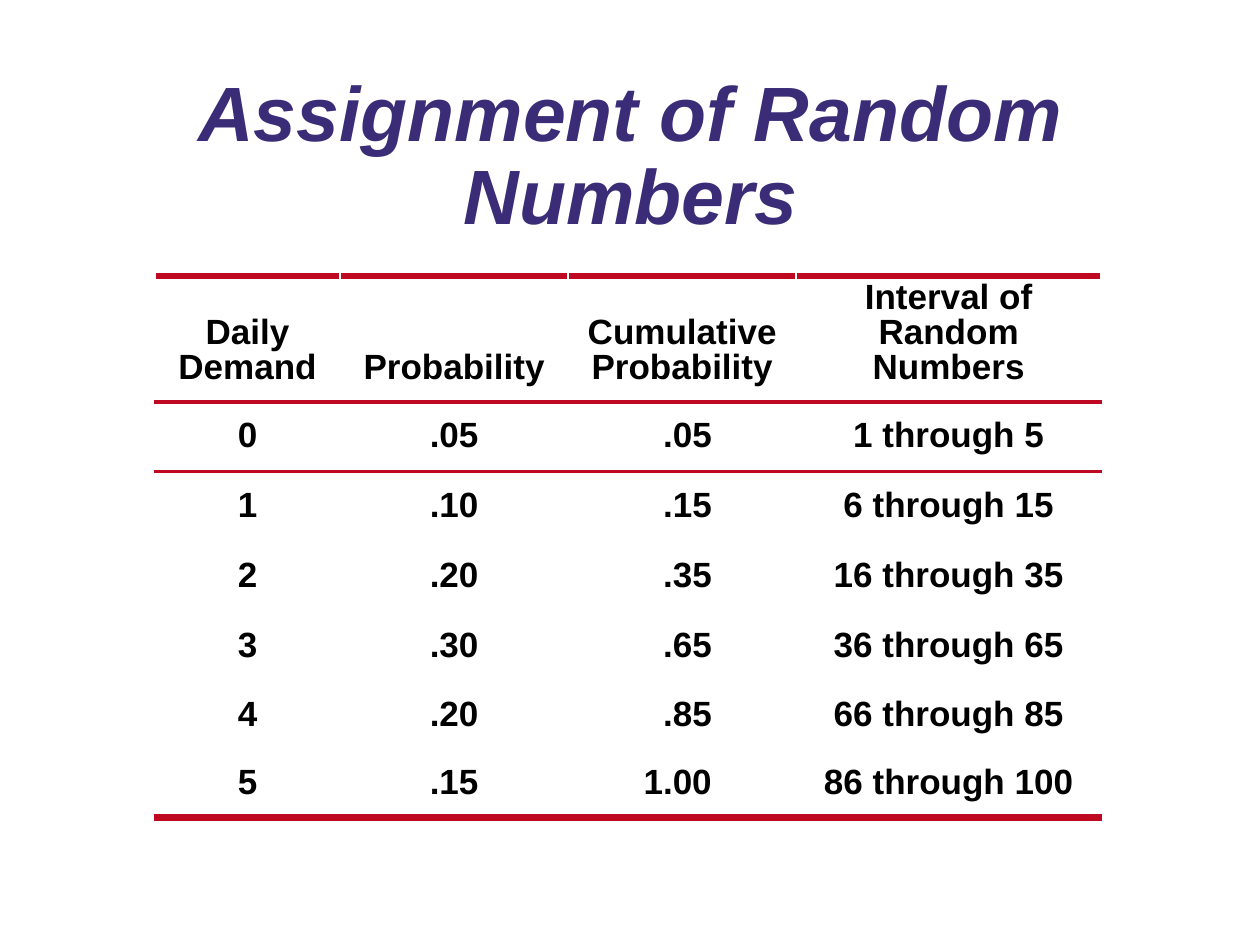
import pptx
import pptx.util
import pptx.dml.color
import pptx.enum.text
import pptx.oxml
import pptx.oxml.ns

Inches = pptx.util.Inches
Pt = pptx.util.Pt
Align = pptx.enum.text.PP_ALIGN
Anchor = pptx.enum.text.MSO_ANCHOR
NS = pptx.oxml.ns.nsdecls("a")

HEADS = ["Daily Demand", "Probability", "Cumulative Probability",
         "Interval of Random Numbers"]
ROWS = [
    ["0", ".05", ".05", "1 through 5"],
    ["1", ".10", ".15", "6 through 15"],
    ["2", ".20", ".35", "16 through 35"],
    ["3", ".30", ".65", "36 through 65"],
    ["4", ".20", ".85", "66 through 85"],
    ["5", ".15", "1.00", "86 through 100"],
]
WIDTHS = [1.47, 1.81, 1.81, 2.42]
HEIGHTS = [1, 0.55, 0.56, 0.56, 0.55, 0.55, 0.53]
TABBED = 2  # column of cumulative values, set on a tab stop


def color(code):
    return pptx.dml.color.RGBColor.from_string(code)


class Sheet:
    font = "Arial"
    ink = "000000"
    accent = "3A2C76"
    rule = "BF0922"

    def __init__(self, slide):
        self.slide = slide

    def label(self, frame, text, size, ink, align=Align.CENTER, italic=False):
        para = frame.paragraphs[0]
        para.alignment = align
        para.line_spacing = 0.9
        run = para.add_run()
        run.text = text
        font = run.font
        font.name, font.size = self.font, Pt(size)
        font.bold, font.italic = True, italic
        font.color.rgb = color(ink)
        return para

    def title(self, text):
        shape = self.slide.shapes.title
        shape.left, shape.top = Inches(0.58), Inches(0.52)
        shape.width, shape.height = Inches(8.85), Inches(1.47)
        shape.text_frame.vertical_anchor = Anchor.MIDDLE
        self.label(shape.text_frame, text, 44, self.accent, italic=True)

    def border(self, cell, side, width):
        """Draw one edge of a cell; side is T or B."""
        cell._tc.get_or_add_tcPr().append(pptx.oxml.parse_xml(
            f'<a:ln{side} {NS} w="{Pt(width)}"><a:solidFill>'
            f'<a:srgbClr val="{self.rule}"/></a:solidFill></a:ln{side}>'))

    def tab(self, para, at):
        """Set a right tab stop."""
        para._p.get_or_add_pPr().append(pptx.oxml.parse_xml(
            f'<a:tabLst {NS}><a:tab pos="{Inches(at)}" algn="r"/></a:tabLst>'))

    def head(self, cell, text):
        cell.vertical_anchor = Anchor.BOTTOM
        cell.margin_top, cell.margin_bottom = Inches(0.03), Inches(0.12)
        self.label(cell.text_frame, text, 20, self.ink)

    def value(self, cell, text, tabbed):
        cell.vertical_anchor = Anchor.MIDDLE
        if tabbed:
            para = self.label(cell.text_frame, "\t" + text, 20, self.ink, Align.LEFT)
            self.tab(para, 1.04)
        else:
            self.label(cell.text_frame, text, 20, self.ink)

    def table(self, heads, rows):
        grid = self.slide.shapes.add_table(
            len(rows) + 1, len(heads), Inches(1.23), Inches(2.19),
            Inches(sum(WIDTHS)), Inches(sum(HEIGHTS))).table
        grid.first_row = grid.horz_banding = False
        for col, width in zip(grid.columns, WIDTHS):
            col.width = Inches(width)
        for row, height in zip(grid.rows, HEIGHTS):
            row.height = Inches(height)
        for r, texts in enumerate([heads] + rows):
            for c, text in enumerate(texts):
                cell = grid.cell(r, c)
                if r == 0:
                    self.head(cell, text)
                    self.border(cell, "T", 4.5)
                    self.border(cell, "B", 2.25)
                else:
                    self.value(cell, text, c == TABBED)
                if r == 1:
                    self.border(cell, "T", 2.25)
                if r == len(rows):
                    self.border(cell, "B", 4.5)
                cell.fill.background()


def main():
    deck = pptx.Presentation()
    deck.slide_width, deck.slide_height = Inches(10), Inches(7.5)
    sheet = Sheet(deck.slides.add_slide(deck.slide_layouts[5]))
    sheet.title("Assignment of Random Numbers")
    sheet.table(HEADS, ROWS)
    deck.save("out.pptx")


if __name__ == "__main__":
    main()
